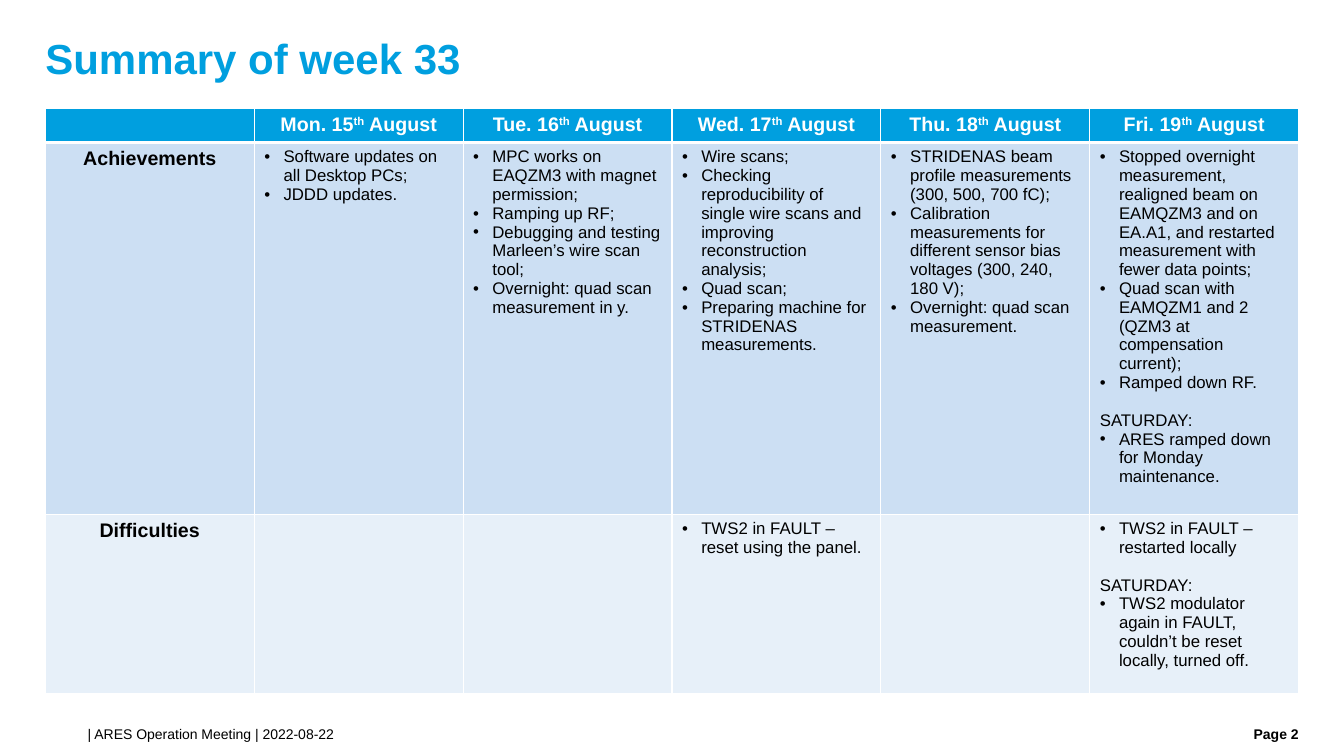
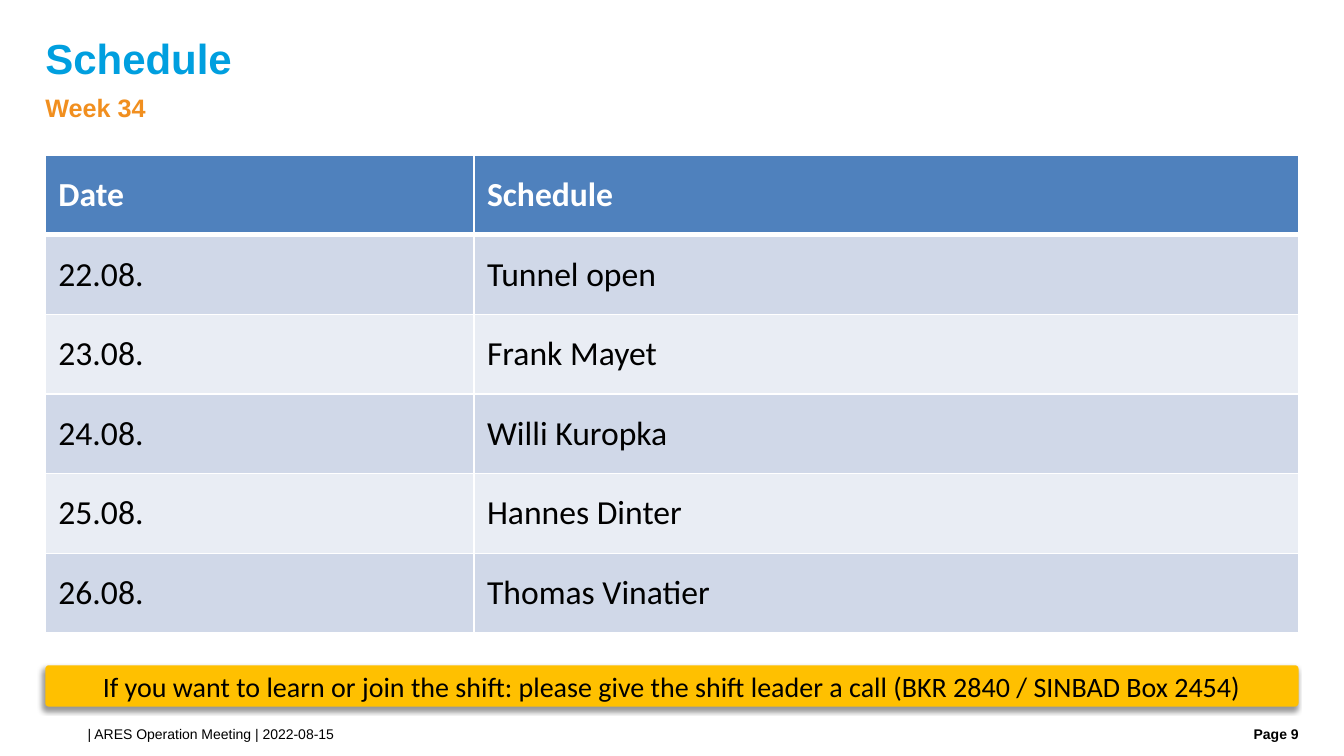
from lxml import etree
from pptx import Presentation
from pptx.dml.color import RGBColor
from pptx.enum.shapes import MSO_SHAPE
from pptx.enum.text import MSO_ANCHOR, PP_ALIGN
from pptx.oxml.ns import qn
from pptx.util import Inches, Pt

# Shared look
ROUNDED = MSO_SHAPE.ROUNDED_RECTANGLE
TOP, MIDDLE = MSO_ANCHOR.TOP, MSO_ANCHOR.MIDDLE
LEFT, CENTER, RIGHT = PP_ALIGN.LEFT, PP_ALIGN.CENTER, PP_ALIGN.RIGHT

COLORS = {
    "title": "009FDF", "subtitle": "F18F1F", "text": "000000", "white": "FFFFFF",
    "week_dark": "CCDFF3", "week_light": "E7F0F9",
    "plan_head": "4F81BD", "plan_dark": "D0D8E8", "plan_light": "E9EDF4",
    "banner": "FFC000",
}


def text_format(size, color="text", bold=False, name="Arial"):
    return {"size": Pt(size), "bold": bold, "name": name, "color": color}


FORMATS = {
    "title": text_format(30, "title", True),
    "subtitle": text_format(18, "subtitle", True),
    "footer": text_format(10),
    "page": text_format(10, bold=True),
    "week_head": text_format(14, "white", True),
    "week_label": text_format(14, bold=True),
    "week_body": text_format(12),
    "plan_head": text_format(24, "white", True, "Calibri"),
    "plan_body": text_format(24, name="Calibri"),
    "banner": text_format(20, name="Calibri"),
}

# Grid in inches
SLIDE_WIDTH, SLIDE_HEIGHT = 13.33, 7.5
MARGIN = 0.45
CONTENT_WIDTH = SLIDE_WIDTH - 2 * MARGIN
FOOTER_TOP, FOOTER_HEIGHT = 7.2, 0.2
PAGE_WIDTH = 1.02
BULLET_INDENT = 0.19

# Content
SATURDAY = "SATURDAY:"
WEEK = [  # day, achievements, difficulties
    ("Mon. 15", ["Software updates on all Desktop PCs;", "JDDD updates."], []),
    ("Tue. 16", ["MPC works on EAQZM3 with magnet permission;", "Ramping up RF;",
                 "Debugging and testing Marleen’s wire scan tool;",
                 "Overnight: quad scan measurement in y."], []),
    ("Wed. 17", ["Wire scans;",
                 "Checking reproducibility of single wire scans and improving "
                 "reconstruction analysis;",
                 "Quad scan;", "Preparing machine for STRIDENAS measurements."],
     ["TWS2 in FAULT – reset using the panel."]),
    ("Thu. 18", ["STRIDENAS beam profile measurements (300, 500, 700 fC);",
                 "Calibration measurements for different sensor bias voltages "
                 "(300, 240, 180 V);",
                 "Overnight: quad scan measurement."], []),
    ("Fri. 19", ["Stopped overnight measurement, realigned beam on EAMQZM3 and on "
                 "EA.A1, and restarted measurement with fewer data points;",
                 "Quad scan with EAMQZM1 and 2 (QZM3 at compensation current);",
                 "Ramped down RF.", SATURDAY,
                 "ARES ramped down for Monday maintenance."],
     ["TWS2 in FAULT – restarted locally", SATURDAY,
      "TWS2 modulator again in FAULT, couldn’t be reset locally, turned off."]),
]
PLAN = [
    ("Date", "Schedule"),
    ("22.08.", "Tunnel open"),
    ("23.08.", "Frank Mayet"),
    ("24.08.", "Willi Kuropka"),
    ("25.08.", "Hannes Dinter"),
    ("26.08.", "Thomas Vinatier"),
]


# Text
def color_of(name):
    return RGBColor.from_string(COLORS[name])


def add_run(paragraph, text, style):
    run = paragraph.add_run()
    run.text = text
    for attribute, value in FORMATS[style].items():
        if attribute == "color":
            run.font.color.rgb = color_of(value)
        else:
            setattr(run.font, attribute, value)
    return run


def add_text(slide, box, text, style, align=LEFT, spacing=1.0):
    frame = slide.shapes.add_textbox(*map(Inches, box)).text_frame
    settings = {"word_wrap": True, "vertical_anchor": TOP, "margin_left": 0,
                "margin_top": 0, "margin_right": 0, "margin_bottom": 0}
    for attribute, value in settings.items():
        setattr(frame, attribute, value)
    paragraph = frame.paragraphs[0]
    paragraph.alignment = align
    paragraph.line_spacing = spacing
    add_run(paragraph, text, style)


def add_bullet(paragraph):
    properties = paragraph._p.get_or_add_pPr()
    properties.set("marL", str(Inches(BULLET_INDENT)))
    properties.set("indent", str(-Inches(BULLET_INDENT)))
    etree.SubElement(properties, qn("a:buFont"), typeface="Arial")
    etree.SubElement(properties, qn("a:buChar"), char="•")


# Tables
def set_borders(cell, top, bottom):
    properties = cell._tc.get_or_add_tcPr()
    for side, width in (("lnL", 1), ("lnR", 1), ("lnT", top), ("lnB", bottom)):
        line = etree.SubElement(properties, qn(f"a:{side}"), w=str(Pt(width)))
        fill = etree.SubElement(line, qn("a:solidFill"))
        etree.SubElement(fill, qn("a:srgbClr"), val=COLORS["white"])


def add_table(slide, top, widths, heights, row_fills, head_line):
    """Add an empty table with a heavier line below its first row."""
    frame = slide.shapes.add_table(
        len(heights), len(widths), Inches(MARGIN), Inches(top),
        Inches(sum(widths)), Inches(sum(heights)))
    table = frame.table
    table.first_row = table.horz_banding = False
    for column, width in zip(table.columns, widths):
        column.width = Inches(width)
    for index, (row, height, fill) in enumerate(zip(table.rows, heights, row_fills)):
        row.height = Inches(height)
        for cell in row.cells:
            set_borders(cell, head_line if index == 1 else 1,
                        head_line if index == 0 else 1)
            cell.fill.solid()
            cell.fill.fore_color.rgb = color_of(fill)
    return table


def fill_label(cell, text, style):
    paragraph = cell.text_frame.paragraphs[0]
    paragraph.alignment = CENTER
    add_run(paragraph, text, style)
    return paragraph


def fill_day(cell, day):
    paragraph = fill_label(cell, day, "week_head")
    ordinal = add_run(paragraph, "th", "week_head")
    ordinal.font._element.set("baseline", "30000")
    add_run(paragraph, " August", "week_head")


def fill_list(cell, items):
    frame = cell.text_frame
    for index, item in enumerate(items):
        paragraph = frame.add_paragraph() if index else frame.paragraphs[0]
        if item == SATURDAY:
            paragraph.space_before = Pt(13.5)
        else:
            add_bullet(paragraph)
        add_run(paragraph, item, "week_body")


def add_week_table(slide):
    columns = len(WEEK) + 1
    table = add_table(slide, 1.08, [CONTENT_WIDTH / columns] * columns,
                      [0.32, 3.46, 1.78], ["title", "week_dark", "week_light"], 3)
    corner = table.cell(0, 0).text_frame.paragraphs[0]
    corner._p.get_or_add_endParaRPr().set("sz", "1400")
    for row, label in enumerate(("Achievements", "Difficulties"), start=1):
        fill_label(table.cell(row, 0), label, "week_label")
    for column, (day, achievements, difficulties) in enumerate(WEEK, start=1):
        fill_day(table.cell(0, column), day)
        fill_list(table.cell(1, column), achievements)
        fill_list(table.cell(2, column), difficulties)


def add_plan_table(slide):
    date_width = 0.342 * CONTENT_WIDTH
    fills = ["plan_head"] + [("plan_light", "plan_dark")[row % 2]
                             for row in range(1, len(PLAN))]
    table = add_table(slide, 1.54, [date_width, CONTENT_WIDTH - date_width],
                      [0.79] * len(PLAN), fills, 4)
    margins = {"margin_left": 0.13, "margin_right": 0.13,
               "margin_top": 0.07, "margin_bottom": 0.07}
    for row, texts in enumerate(PLAN):
        for column, text in enumerate(texts):
            cell = table.cell(row, column)
            cell.vertical_anchor = MIDDLE
            for attribute, value in margins.items():
                setattr(cell, attribute, Inches(value))
            add_run(cell.text_frame.paragraphs[0], text,
                    "plan_body" if row else "plan_head")


# Banner
def add_shadow(shape):
    shape.shadow.inherit = False
    effects = shape._element.spPr.find(qn("a:effectLst"))
    shadow = etree.SubElement(effects, qn("a:outerShdw"), blurRad=str(Pt(4)),
                              dist=str(Pt(3)), dir=str(135 * 60000), rotWithShape="0")
    color = etree.SubElement(shadow, qn("a:srgbClr"), val=COLORS["text"])
    etree.SubElement(color, qn("a:alpha"), val="40000")


def add_banner(slide, text):
    shape = slide.shapes.add_shape(
        ROUNDED, *map(Inches, (MARGIN, 6.6, CONTENT_WIDTH, 0.41)))
    shape.adjustments[0] = 0.085
    shape.fill.solid()
    shape.fill.fore_color.rgb = color_of("banner")
    shape.line.fill.background()
    add_shadow(shape)
    frame = shape.text_frame
    frame.word_wrap = True
    frame.vertical_anchor = MIDDLE
    paragraph = frame.paragraphs[0]
    paragraph.alignment = CENTER
    add_run(paragraph, text, "banner")


# Slides
def add_slide(presentation, title, date, page):
    """Add a slide with its title, meeting footer and page number."""
    slide = presentation.slides.add_slide(presentation.slide_layouts[6])
    add_text(slide, (MARGIN, 0.38, CONTENT_WIDTH, 0.49), title, "title", spacing=0.9)
    add_text(slide, (0.87, FOOTER_TOP, 10.88, FOOTER_HEIGHT),
             f"| ARES Operation Meeting | {date}", "footer")
    page_left = SLIDE_WIDTH - MARGIN - PAGE_WIDTH
    add_text(slide, (page_left, FOOTER_TOP, PAGE_WIDTH, FOOTER_HEIGHT),
             f"Page {page}", "page", RIGHT)
    return slide


def main():
    presentation = Presentation()
    presentation.slide_width = Inches(SLIDE_WIDTH)
    presentation.slide_height = Inches(SLIDE_HEIGHT)

    summary = add_slide(presentation, "Summary of week 33", "2022-08-22", 2)
    add_week_table(summary)

    schedule = add_slide(presentation, "Schedule", "2022-08-15", 9)
    add_text(schedule, (MARGIN, 0.89, CONTENT_WIDTH, 0.41), "Week 34", "subtitle",
             spacing=1.1)
    add_plan_table(schedule)
    add_banner(schedule, "If you want to learn or join the shift: please give the "
                         "shift leader a call (BKR 2840 / SINBAD Box 2454)")

    presentation.save("out.pptx")


if __name__ == "__main__":
    main()
